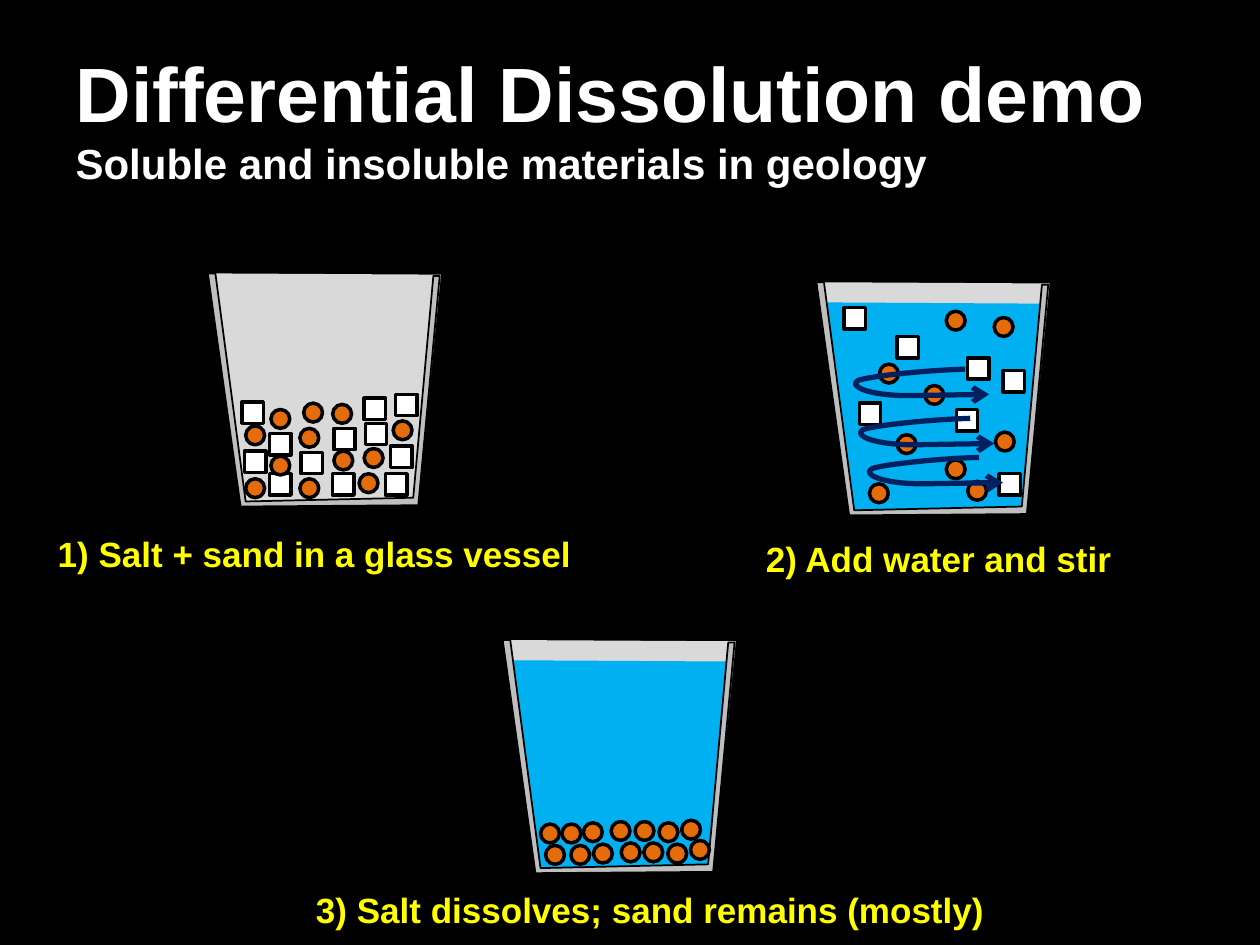
"""Build the differential dissolution slide with three vessels of salt and sand."""
from dataclasses import dataclass

import pptx
import pptx.util
from lxml import etree
from pptx.dml.color import RGBColor
from pptx.enum.shapes import MSO_SHAPE
from pptx.enum.text import MSO_ANCHOR, MSO_AUTO_SIZE, PP_ALIGN
from pptx.oxml.ns import qn
from pptx.util import Inches

BLACK = RGBColor(0x00, 0x00, 0x00)
WHITE = RGBColor(0xFF, 0xFF, 0xFF)
YELLOW = RGBColor(0xFF, 0xFF, 0x00)
GLASS = RGBColor(0xD9, 0xD9, 0xD9)
WALL = RGBColor(0xBF, 0xBF, 0xBF)
WATER = RGBColor(0x00, 0xB0, 0xF0)
SAND = RGBColor(0xE4, 0x6C, 0x0A)
NAVY = RGBColor(0x00, 0x20, 0x60)

Points = list[tuple[float, float]]

GLASS_OUTLINE: Points = [(0, 0), (1.84, 0.01), (1.66, 1.82), (0.26, 1.83)]
WATER_OUTLINE: Points = [(0.06, 0.16), (1.78, 0.17), (1.65, 1.83), (0.25, 1.85)]
WALL_OUTLINE: Points = [(1.83, 0.02), (1.78, 0.02), (1.62, 1.78), (0.29, 1.81),
                        (0.05, 0), (-0.01, 0), (0.25, 1.85), (1.66, 1.84)]
STIR_CURVE: Points = [(0, 0), (-0.35, 0.01), (-0.78, 0.06), (-0.85, 0.09),
                      (-0.93, 0.13), (-0.78, 0.21), (-0.45, 0.21), (0.19, 0.2)]
STIR_STARTS: Points = [(7.66, 2.93), (7.7, 3.32), (7.77, 3.63)]


@dataclass
class Vessel:
    x: float
    y: float
    has_water: bool
    caption: str
    caption_box: tuple[float, float, float]
    salt: Points
    sand: Points


VESSELS = [
    Vessel(1.66, 2.17, False, "1) Salt + sand in a glass vessel", (0.36, 4.18, 4.3),
           [(1.94, 3.58), (2.14, 3.44), (2.14, 3.76), (2.39, 3.59), (2.64, 3.76),
            (2.65, 3.4), (3.06, 3.76), (3.1, 3.54), (2.9, 3.36), (2.89, 3.16),
            (3.14, 3.13), (1.92, 3.19)],
           [(2.89, 3.56), (2.38, 3.8), (1.95, 3.8), (2.15, 3.62), (1.95, 3.38),
            (2.38, 3.4), (2.65, 3.58), (3.12, 3.34), (2.85, 3.76), (2.15, 3.25),
            (2.64, 3.21), (2.41, 3.2)]),
    Vessel(6.49, 2.24, True, "2) Add water and stir", (5.98, 4.22, 2.96),
           [(6.7, 2.44), (7.59, 3.25), (7.93, 3.76), (6.82, 3.2), (7.12, 2.67),
            (7.96, 2.94), (7.68, 2.84)],
           [(6.9, 3.84), (7.51, 2.47), (7.9, 3.43), (7.12, 3.45), (7.51, 3.65),
            (6.98, 2.89), (7.68, 3.82), (7.89, 2.52), (7.34, 3.06)]),
    Vessel(4, 5.08, True, "3) Salt dissolves; sand remains (mostly)", (2.41, 7, 5.54),
           [],
           [(4.33, 6.71), (4.53, 6.71), (4.71, 6.7), (4.93, 6.69), (5.11, 6.69),
            (5.3, 6.7), (4.29, 6.54), (5.48, 6.67), (4.46, 6.54), (4.63, 6.53),
            (4.85, 6.52), (5.04, 6.52), (5.23, 6.53), (5.41, 6.51)]),
]


def add_outline(s, x: float, y: float, points: Points, close: bool = True):
    """Add a shadowless freeform through points given relative to (x, y)."""
    start, *rest = [(Inches(x + dx), Inches(y + dy)) for dx, dy in points]
    fb = s.shapes.build_freeform(*start)
    fb.add_line_segments(rest, close=close)
    sp = fb.convert_to_shape()
    sp.shadow.inherit = False
    return sp


def paint(sp, fill: RGBColor, line_width: float = 0) -> None:
    """Fill a shape and give it a black line, or none when the width is zero."""
    sp.fill.solid()
    sp.fill.fore_color.rgb = fill
    if line_width:
        sp.line.color.rgb = BLACK
        sp.line.width = pptx.util.Pt(line_width)
    else:
        sp.line.fill.background()


def add_grains(s, kind: MSO_SHAPE, size: float, fill: RGBColor, places: Points) -> None:
    """Add equal grains at the given places."""
    for x, y in places:
        sp = s.shapes.add_shape(kind, Inches(x), Inches(y), Inches(size), Inches(size))
        sp.shadow.inherit = False
        paint(sp, fill, 2)


def add_caption(s, text: str, box: tuple[float, float, float]) -> None:
    """Add a bold yellow caption on one line."""
    x, y, width = box
    tf = s.shapes.add_textbox(Inches(x), Inches(y), Inches(width), Inches(0.44)).text_frame
    tf.word_wrap = False
    tf.auto_size = MSO_AUTO_SIZE.SHAPE_TO_FIT_TEXT
    p = tf.paragraphs[0]
    p.text = text
    set_font(p.font, YELLOW)
    p.font.size = pptx.util.Pt(20)


def set_font(font, color: RGBColor) -> None:
    """Set the bold typeface that the slide shares."""
    font.name = "Arial"
    font.bold = True
    font.color.rgb = color


def add_vessel(s, vessel: Vessel) -> None:
    """Add a vessel with its contents and caption."""
    paint(add_outline(s, vessel.x, vessel.y, GLASS_OUTLINE), GLASS)
    if vessel.has_water:
        paint(add_outline(s, vessel.x, vessel.y, WATER_OUTLINE), WATER)
    add_caption(s, vessel.caption, vessel.caption_box)
    paint(add_outline(s, vessel.x, vessel.y, WALL_OUTLINE), WALL, 1)
    add_grains(s, MSO_SHAPE.RECTANGLE, 0.17, WHITE, vessel.salt)
    add_grains(s, MSO_SHAPE.OVAL, 0.15, SAND, vessel.sand)


def add_stir_arrow(s, x: float, y: float) -> None:
    """Add a hooked arrow of two Bezier curves and a straight end."""
    sp = add_outline(s, x, y, STIR_CURVE, close=False)
    sp.fill.background()
    sp.line.color.rgb = NAVY
    sp.line.width = pptx.util.Pt(3)
    segments = list(sp.element.iter(qn("a:lnTo")))
    for i in (0, 3):
        curve = etree.Element(qn("a:cubicBezTo"))
        segments[i].addprevious(curve)
        for segment in segments[i:i + 3]:
            curve.append(segment[0])
            segment.getparent().remove(segment)
    etree.SubElement(sp.line._get_or_add_ln(), qn("a:tailEnd"), type="arrow")


def add_title(s) -> None:
    """Fill the title placeholder with the heading and subheading."""
    sp = s.shapes.title
    sp.left, sp.top, sp.width, sp.height = map(Inches, (0.5, 0.3, 9, 1.25))
    tf = sp.text_frame
    tf.vertical_anchor = MSO_ANCHOR.MIDDLE
    p = tf.paragraphs[0]
    p.alignment = PP_ALIGN.LEFT
    set_font(p.font, WHITE)
    heading = p.add_run()
    heading.text = "Differential Dissolution demo"
    heading.font.size = pptx.util.Pt(44)
    p.add_line_break()
    subheading = p.add_run()
    subheading.text = "Soluble and insoluble materials in geology"
    subheading.font.size = pptx.util.Pt(24)


def main() -> None:
    """Build and save the slide."""
    prs = pptx.Presentation()
    prs.slide_width, prs.slide_height = Inches(10), Inches(7.5)
    s = prs.slides.add_slide(prs.slide_layouts[5])
    s.background.fill.solid()
    s.background.fill.fore_color.rgb = BLACK
    add_title(s)
    for vessel in VESSELS:
        add_vessel(s, vessel)
    for x, y in STIR_STARTS:
        add_stir_arrow(s, x, y)
    prs.save("out.pptx")


if __name__ == "__main__":
    main()
